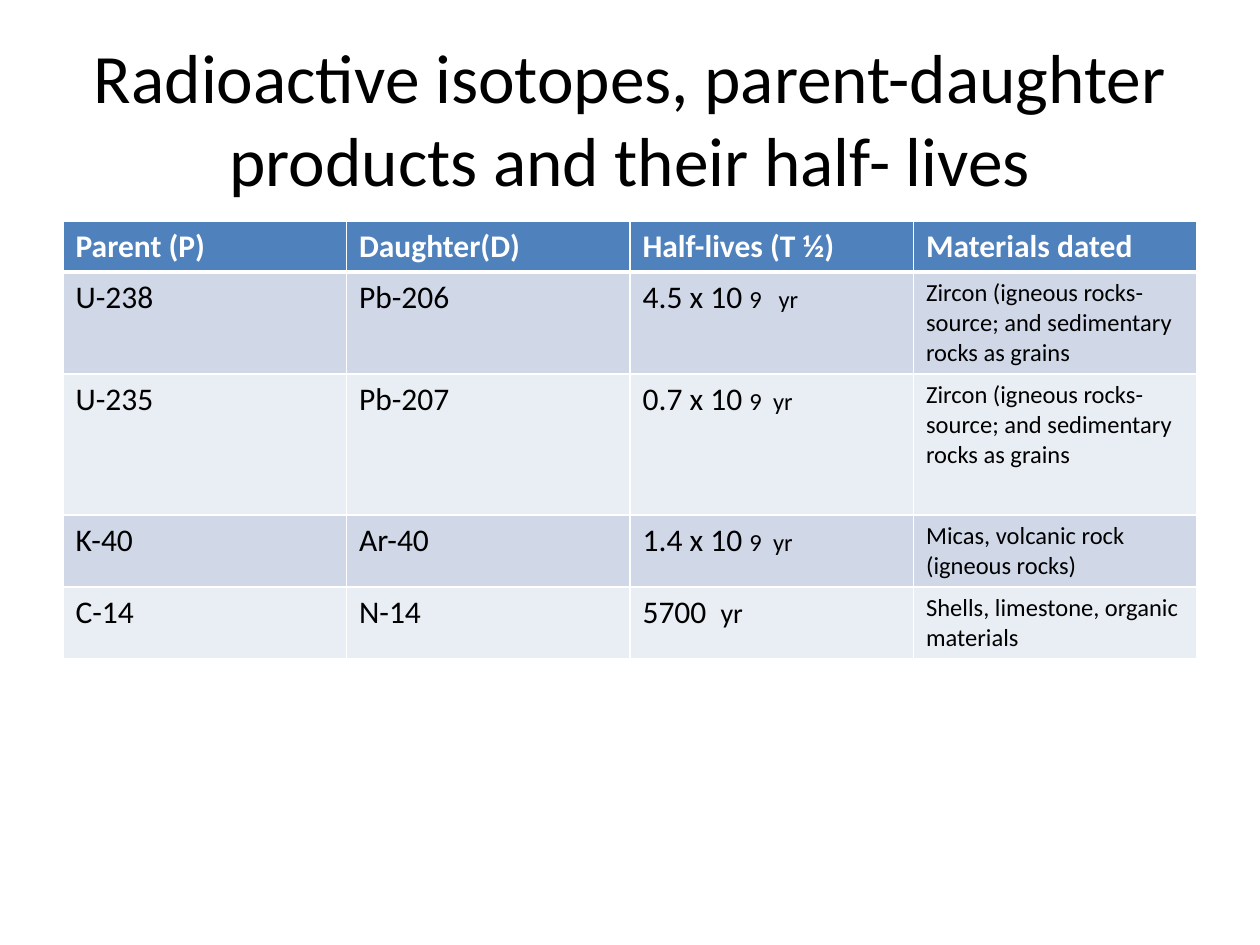
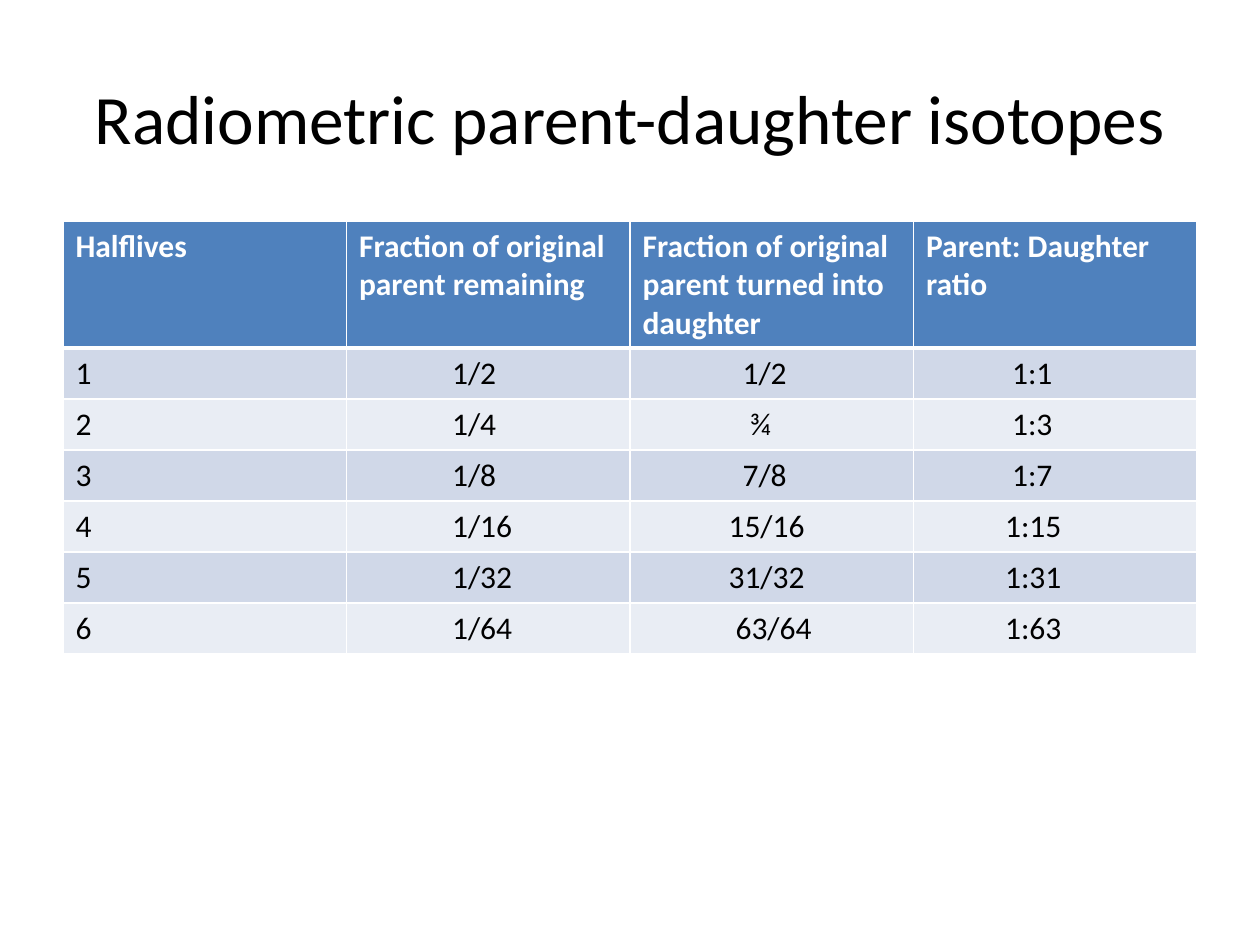
from lxml import etree
from pptx import Presentation
from pptx import util as u
from pptx.dml.color import RGBColor
from pptx.enum import text
from pptx.oxml import ns

FONT = "Calibri"
BLACK = RGBColor(0x00, 0x00, 0x00)
WHITE = RGBColor(0xFF, 0xFF, 0xFF)
HEADER_BLUE = RGBColor(0x4F, 0x81, 0xBD)
BANDS = RGBColor(0xD0, 0xD8, 0xE8), RGBColor(0xE9, 0xED, 0xF4)

PX_PER_INCH = 126
SLIDE_W, SLIDE_H = 1260, 945
MARGIN = 63
CONTENT_W = SLIDE_W - 2 * MARGIN
TITLE_TOP, TITLE_H = 38, 158
TABLE_TOP = 221
TITLE_SIZE, BODY_SIZE, NOTE_SIZE = 39.6, 18, 14
THIN, THICK = 1, 3

ZIRCON = "Zircon (igneous rocks-source; and sedimentary rocks as grains"


def billions(value, gap):
    return [(f"{value} x 10 ", BODY_SIZE, 0), ("9", NOTE_SIZE, 0),
            (" ", NOTE_SIZE, gap), ("yr", NOTE_SIZE, 0)]


def note(words):
    return [(words, NOTE_SIZE, 0)]


CARBON_LIFE = [("5700", BODY_SIZE, 0), (" ", BODY_SIZE, 4), ("yr", 16, 0)]

SLIDES = [
    {
        "title": "Radioactive isotopes, parent-daughter products and their half- lives",
        "header": ["Parent (P)", "Daughter(D)", "Half-lives (T ½)", "Materials dated"],
        "rows": [
            ["U-238", "Pb-206", billions("4.5", 6.4), note(ZIRCON)],
            ["U-235", "Pb-207", billions("0.7", 3.2), note(ZIRCON)],
            ["K-40", "Ar-40", billions("1.4", 3.2), note("Micas, volcanic rock (igneous rocks)")],
            ["C-14", "N-14", CARBON_LIFE, note("Shells, limestone, organic materials")],
        ],
        "indents": [[0] * 4] * 4,
        "heights": [51, 102, 141, 72, 72],
    },
    {
        "title": "Radiometric parent-daughter isotopes",
        "header": ["Halflives", "Fraction of original parent remaining",
                   "Fraction of original parent turned into daughter",
                   "Parent: Daughter ratio"],
        "rows": [
            ["1", "1/2", "1/2", "1:1"],
            ["2", "1/4", "¾", "1:3"],
            ["3", "1/8", "7/8", "1:7"],
            ["4", "1/16", "15/16", "1:15"],
            ["5", "1/32", "31/32", "1:31"],
            ["6", "1/64", "63/64", "1:63"],
        ],
        "indents": [
            [0, 93, 100, 86],
            [0, 93, 107, 86],
            [0, 93, 100, 86],
            [0, 93, 86, 79],
            [0, 93, 86, 79],
            [0, 93, 93, 79],
        ],
        "heights": [127] + [51] * 6,
    },
]


def px(length):
    return u.Emu(round(length * u.Inches(1) / PX_PER_INCH))


def style(run, size, color, bold=False):
    run.font.name = FONT
    run.font.size = u.Pt(size)
    run.font.bold = bold
    run.font.color.rgb = color


def add_title(slide, words):
    title = slide.shapes.add_textbox(px(MARGIN), px(TITLE_TOP), px(CONTENT_W), px(TITLE_H))
    frame = title.text_frame
    frame.word_wrap = True
    frame.vertical_anchor = text.MSO_ANCHOR.MIDDLE
    frame.text = words
    line = frame.paragraphs[0]
    line.alignment = text.PP_ALIGN.CENTER
    style(line.runs[0], TITLE_SIZE, BLACK)


def draw_borders(cell, top, bottom):
    properties = cell._tc.get_or_add_tcPr()
    for side, width in (("L", THIN), ("R", THIN), ("T", top), ("B", bottom)):
        border = etree.SubElement(properties, ns.qn(f"a:ln{side}"), w=str(u.Pt(width)))
        fill = etree.SubElement(border, ns.qn("a:solidFill"))
        etree.SubElement(fill, ns.qn("a:srgbClr"), val=str(WHITE))


def fill_cell(cell, content, row, indent):
    is_header = row == 0
    draw_borders(cell, THICK if row == 1 else THIN, THICK if is_header else THIN)
    cell.fill.solid()
    cell.fill.fore_color.rgb = HEADER_BLUE if is_header else BANDS[(row - 1) % 2]
    line = cell.text_frame.paragraphs[0]
    if indent:
        line._p.get_or_add_pPr().set("marL", str(px(indent)))
    parts = [(content, BODY_SIZE, 0)] if isinstance(content, str) else content
    for words, size, gap in parts:
        run = line.add_run()
        run.text = words
        style(run, size, WHITE if is_header else BLACK, is_header)
        if gap:
            run._r.get_or_add_rPr().set("spc", str(round(gap * 100)))


def add_isotope_table(slide, content):
    rows = [content["header"]] + content["rows"]
    indents = [[0] * len(rows[0])] + content["indents"]
    heights = content["heights"]
    table = slide.shapes.add_table(len(rows), len(rows[0]), px(MARGIN), px(TABLE_TOP),
                                   px(CONTENT_W), px(sum(heights))).table
    for r, (entries, row_indents) in enumerate(zip(rows, indents)):
        table.rows[r].height = px(heights[r])
        for c, (entry, indent) in enumerate(zip(entries, row_indents)):
            fill_cell(table.cell(r, c), entry, r, indent)


def main():
    deck = Presentation()
    deck.slide_width, deck.slide_height = px(SLIDE_W), px(SLIDE_H)
    for content in SLIDES:
        slide = deck.slides.add_slide(deck.slide_layouts[6])
        add_title(slide, content["title"])
        add_isotope_table(slide, content)
    deck.save("out.pptx")


if __name__ == "__main__":
    main()
